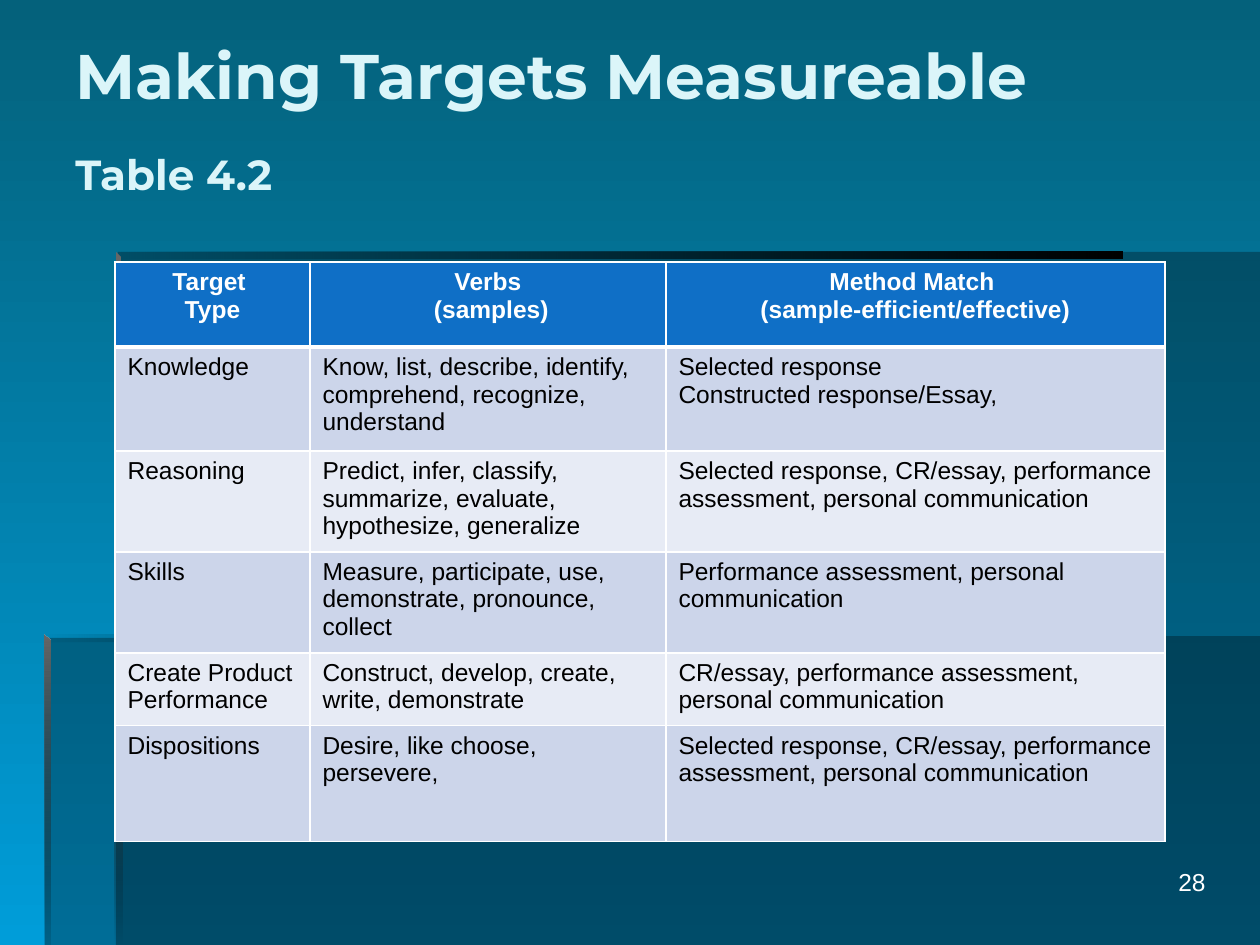
from lxml import etree
from pptx import Presentation, util as u
from pptx.dml.color import RGBColor
from pptx.enum import text
from pptx.oxml.ns import qn

PX = u.Inches(1) / 126
WIDTH, HEIGHT = 1260, 945

BLACK = RGBColor(0x00, 0x00, 0x00)
WHITE = RGBColor(0xFF, 0xFF, 0xFF)
GREY = RGBColor(0x66, 0x66, 0x66)
DEEP_TEAL = RGBColor(0x04, 0x61, 0x7B)
SKY = RGBColor(0x00, 0x9D, 0xD9)
PALE_CYAN = RGBColor(0xDB, 0xF5, 0xF9)
HEADER_BLUE = RGBColor(0x0F, 0x6F, 0xC6)
BAND_DARK = RGBColor(0xCC, 0xD5, 0xEA)
BAND_LIGHT = RGBColor(0xE7, 0xEB, 0xF5)

RIGHTWARD, DOWNWARD = 0, 270


def emu(*lengths):
    return [u.Emu(round(length * PX)) for length in lengths]


def write(frame, lines, color, align=text.PP_ALIGN.LEFT, **font_format):
    """Fill a text frame with one formatted paragraph per line."""
    frame.word_wrap = True
    for i, line in enumerate(lines):
        paragraph = frame.paragraphs[0] if i == 0 else frame.add_paragraph()
        paragraph.alignment = align
        run = paragraph.add_run()
        run.text = line
        run.font.color.rgb = color
        for attribute, value in font_format.items():
            setattr(run.font, attribute, value)


prs = Presentation()
prs.slide_width, prs.slide_height = emu(WIDTH, HEIGHT)
slide = prs.slides.add_slide(prs.slide_layouts[6])

backdrop = slide.background.fill
backdrop.gradient()
backdrop.gradient_angle = DOWNWARD
for stop, color in zip(backdrop.gradient_stops, (DEEP_TEAL, SKY)):
    stop.color.rgb = color

# Overlapping panels and their bevelled edges: points, colours, opacities in %, direction
panels = [
    ([(116, 636), (116, 945), (1260, 945), (1260, 636)], [BLACK], [30], None),
    ([(118, 638), (45, 638), (45, 945), (1260, 945), (1260, 252), (118, 252)],
     [BLACK], [30], None),
    ([(116, 252), (116, 259), (1123, 259), (1123, 252)],
     [BLACK, BLACK], [0, 100], RIGHTWARD),
    ([(116, 252), (116, 643), (122, 643), (121, 257)],
     [GREY, BLACK], [100, 100], DOWNWARD),
    ([(115, 945), (122, 945), (121, 640), (115, 635)],
     [GREY, BLACK], [100, 0], DOWNWARD),
    ([(44, 635), (44, 641), (674, 641), (674, 635)],
     [BLACK, BLACK], [0, 100], RIGHTWARD),
    ([(44, 635), (44, 945), (50, 945), (50, 641)],
     [GREY, BLACK], [100, 10], DOWNWARD),
]
for points, colors, opacities, direction in panels:
    outline = slide.shapes.build_freeform(*points[0], scale=PX)
    outline.add_line_segments(points[1:], close=True)
    panel = outline.convert_to_shape()
    panel.shadow.inherit = False
    panel.line.fill.background()
    if direction is None:
        panel.fill.solid()
        panel.fill.fore_color.rgb = colors[0]
    else:
        panel.fill.gradient()
        panel.fill.gradient_angle = direction
        for stop, color in zip(panel.fill.gradient_stops, colors):
            stop.color.rgb = color
    for color_node, opacity in zip(panel._element.spPr.iter(qn("a:srgbClr")), opacities):
        etree.SubElement(color_node, qn("a:alpha"), val=str(opacity * 1000))

title = slide.shapes.add_textbox(*emu(63, 2, 1155, 231)).text_frame
title.vertical_anchor = text.MSO_ANCHOR.MIDDLE
write(title, ["Making Targets Measureable", "Table 4.2"], PALE_CYAN,
      name="Montserrat", size=u.Pt(36), bold=True)
subtitle = title.paragraphs[1]
subtitle.space_before = u.Pt(21)
subtitle.runs[0].font.size = u.Pt(24)

# Each cell is a list of paragraphs
rows = [
    [["Target ", "Type"], ["Verbs", " (samples)"],
     ["Method Match ", "(sample-efficient/effective)"]],
    [["Knowledge"],
     ["Know, list, describe, identify, comprehend, recognize, understand"],
     ["Selected response", "Constructed response/Essay,"]],
    [["Reasoning"],
     ["Predict, infer, classify, summarize, evaluate, hypothesize, generalize"],
     ["Selected response, CR/essay, performance assessment, personal communication"]],
    [["Skills"],
     ["Measure, participate, use, demonstrate, pronounce, collect"],
     ["Performance assessment, personal communication"]],
    [["Create Product", "Performance"],
     ["Construct, develop, create, write, demonstrate"],
     ["CR/essay, performance assessment, personal communication"]],
    [["Dispositions"],
     ["Desire, like choose, persevere,"],
     ["Selected response, CR/essay, performance assessment, personal communication"]],
]
column_widths = [195, 356, 499]
row_heights = [85, 104, 95, 95, 73, 116]
targets = slide.shapes.add_table(
    len(rows), len(column_widths),
    *emu(115, 262, sum(column_widths), sum(row_heights))).table
for column, width in zip(targets.columns, emu(*column_widths)):
    column.width = width
for row, height in zip(targets.rows, emu(*row_heights)):
    row.height = height

for r, row in enumerate(rows):
    is_header = r == 0
    for c, lines in enumerate(row):
        cell = targets.cell(r, c)
        properties = cell._tc.get_or_add_tcPr()
        for side in "LRTB":
            under_header = (r, side) in ((0, "B"), (1, "T"))
            border = etree.SubElement(properties, qn(f"a:ln{side}"),
                                      w=str(u.Pt(3 if under_header else 1)))
            paint = etree.SubElement(border, qn("a:solidFill"))
            etree.SubElement(paint, qn("a:srgbClr"), val=str(WHITE))
        cell.fill.solid()
        cell.fill.fore_color.rgb = (
            HEADER_BLUE if is_header else BAND_DARK if r % 2 else BAND_LIGHT)
        write(cell.text_frame, lines, WHITE if is_header else BLACK,
              text.PP_ALIGN.CENTER if is_header else text.PP_ALIGN.LEFT,
              name="Arial", size=u.Pt(14), bold=is_header)

page_number = slide.shapes.add_textbox(*emu(956, 861, 262, 66)).text_frame
write(page_number, ["28"], WHITE, text.PP_ALIGN.RIGHT, name="Arial", size=u.Pt(14))

prs.save("out.pptx")
